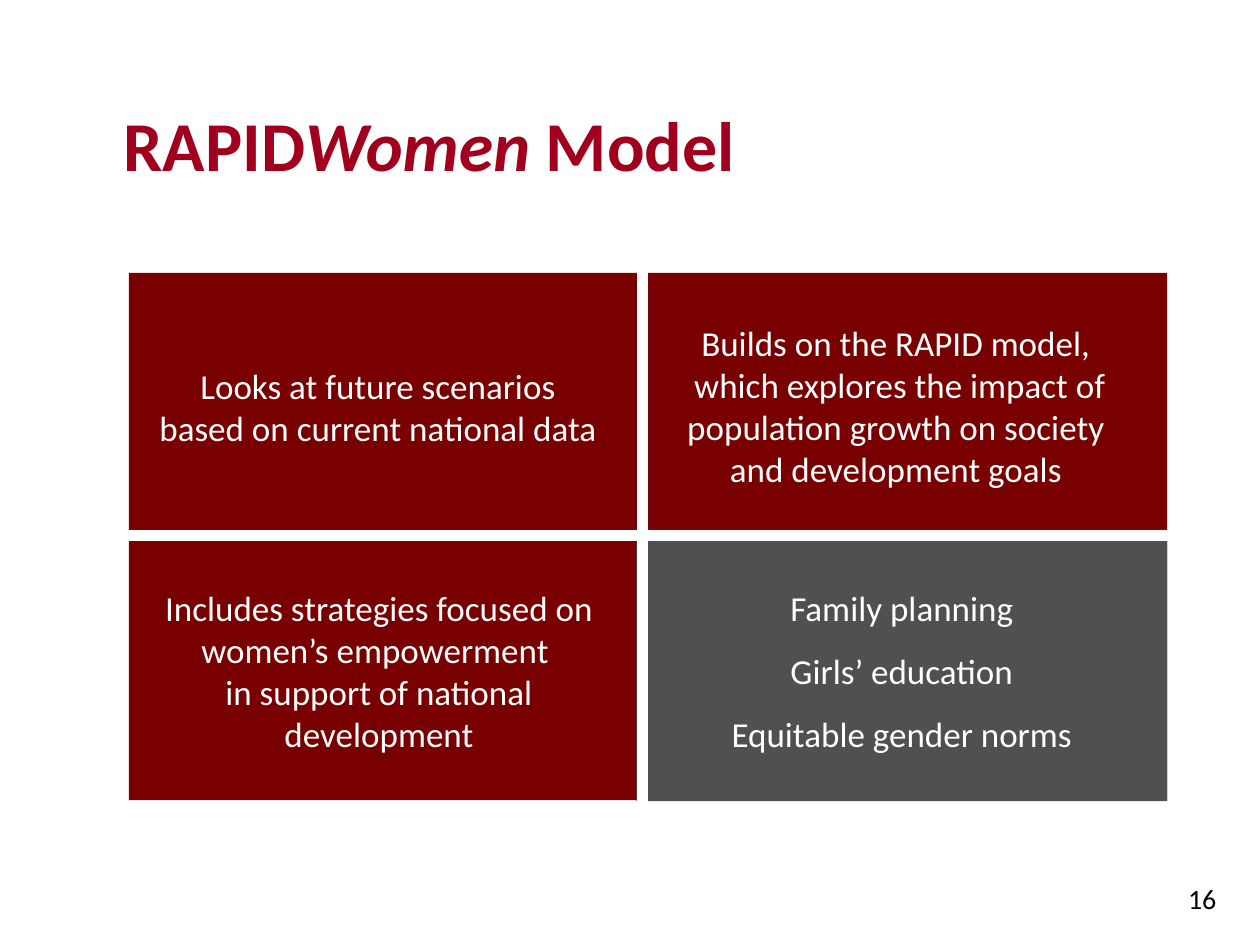
from dataclasses import dataclass

from pptx import Presentation
from pptx.dml.color import RGBColor
from pptx.enum.shapes import MSO_CONNECTOR as CONN, MSO_SHAPE as SHAPE
from pptx.enum.text import MSO_ANCHOR as ANCHOR, PP_ALIGN as ALIGN
from pptx.oxml.ns import qn
from pptx.util import Cm, Pt
from lxml.etree import SubElement

WHITE = RGBColor(0xFF, 0xFF, 0xFF)
BLACK = RGBColor(0x00, 0x00, 0x00)
CRIMSON = RGBColor(0xA0, 0x00, 0x1E)
MAROON = RGBColor(0x78, 0x00, 0x00)
GRAY = RGBColor(0x50, 0x50, 0x50)
FONT = "Calibri"


@dataclass(frozen=True)
class Box:
    left: float
    top: float
    width: float
    height: float

    def lengths(self) -> tuple:
        return Cm(self.left), Cm(self.top), Cm(self.width), Cm(self.height)


@dataclass(frozen=True)
class Quadrant:
    box: Box
    lines: tuple[str, ...]
    last_space: int = 0


@dataclass(frozen=True)
class Divider:
    x1: float
    y1: float
    x2: float
    y2: float


def format_run(r, size: int, color: RGBColor) -> None:
    r.font.name = FONT
    r.font.size = Pt(size)
    r.font.color.rgb = color


def add_rect(slide, box: Box, fill: RGBColor):
    sp = slide.shapes.add_shape(SHAPE.RECTANGLE, *box.lengths())
    sp.shadow.inherit = False
    sp.fill.solid()
    sp.fill.fore_color.rgb = fill
    sp.line.fill.background()
    return sp


def add_textbox(slide, box: Box):
    sp = slide.shapes.add_textbox(*box.lengths())
    sp.text_frame.word_wrap = True
    return sp


def write_lines(sp, lines: tuple[str, ...], space: int = 0, last_space: int = 0) -> None:
    tf = sp.text_frame
    tf.vertical_anchor = ANCHOR.MIDDLE
    tf.text = "\n".join(lines)
    for p in tf.paragraphs:
        p.alignment = ALIGN.CENTER
        p.space_after = Pt(space)
        for r in p.runs:
            format_run(r, 20, WHITE)
    tf.paragraphs[-1].space_after = Pt(last_space)


def add_title(slide, box: Box) -> None:
    p = add_textbox(slide, box).text_frame.paragraphs[0]
    for text, italic in (("RAPID", False), ("Women", True), (" Model", False)):
        r = p.add_run()
        r.text = text
        format_run(r, 40, CRIMSON)
        r.font.bold = True
        r.font.italic = italic


def add_page_number(slide, box: Box, number: int) -> None:
    p = add_textbox(slide, box).text_frame.paragraphs[0]
    p.text = str(number)
    p.alignment = ALIGN.RIGHT
    format_run(p.runs[0], 16, BLACK)


def add_divider(slide, d: Divider) -> None:
    cn = slide.shapes.add_connector(CONN.STRAIGHT, Cm(d.x1), Cm(d.y1), Cm(d.x2), Cm(d.y2))
    cn.line.color.rgb = WHITE
    cn.line.width = Pt(6)
    SubElement(cn._element.spPr, qn("a:effectLst"))


PANEL = Box(2.6, 5.5, 20.93, 10.63)
TITLE = Box(2.24, 1.93, 22.86, 1.78)
STRATEGIES = Box(12.83, 10.9, 10.7, 5.25)
PAGE_NUMBER = Box(21.82, 17.65, 2.95, 0.69)
QUADRANTS = (
    Quadrant(Box(2.6, 5.5, 10.2, 5.4),
             ("Looks at future scenarios ", "based on current national data ")),
    Quadrant(Box(12.78, 5.46, 10.72, 5.44),
             ("Builds on the RAPID model, ",
              "which explores the impact of population growth on society ",
              "and development goals ")),
    Quadrant(Box(2.6, 10.9, 10.08, 5.23),
             ("Includes strategies focused on women’s empowerment ",
              "in support of national development"), last_space=12),
)
DIVIDERS = (Divider(1.4, 10.8, 24.18, 10.8), Divider(12.95, 16.4, 12.95, 4.52))


def main() -> None:
    prs = Presentation()
    prs.slide_width, prs.slide_height = Cm(25.4), Cm(19.05)
    s = prs.slides.add_slide(prs.slide_layouts[6])

    add_rect(s, PANEL, MAROON)
    add_title(s, TITLE)
    write_lines(add_rect(s, STRATEGIES, GRAY),
                ("Family planning", "Girls’ education", "Equitable gender norms"), 12, 12)
    for q in QUADRANTS:
        write_lines(add_textbox(s, q.box), q.lines, last_space=q.last_space)
    add_page_number(s, PAGE_NUMBER, 16)
    for d in DIVIDERS:
        add_divider(s, d)

    prs.save("out.pptx")


if __name__ == "__main__":
    main()
